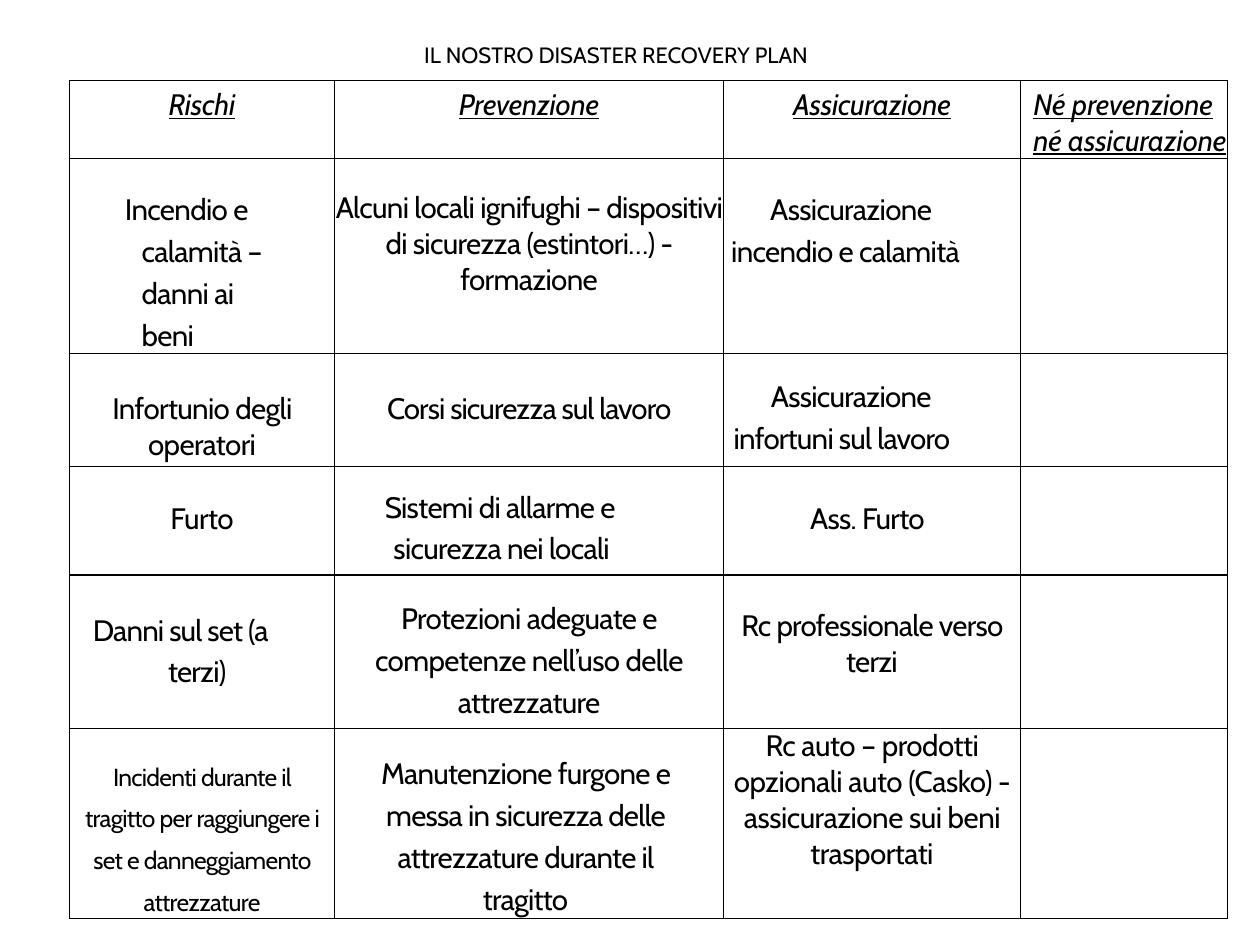
from lxml.etree import SubElement as Sub
from pptx import Presentation
from pptx.dml.color import RGBColor as Rgb
from pptx.enum.text import PP_ALIGN as Al
from pptx.oxml.ns import qn
from pptx.util import Cm, Pt


def put(frame, text, size=24, gap=-0.5, mid=True, left=0, first=0, line=None, head=False):
    para = frame.paragraphs[0]
    para.alignment = Al.CENTER if mid else Al.LEFT
    if line:
        para.line_spacing = Pt(line)
    props = para._p.get_or_add_pPr()
    props.set("marL", str(Cm(left)))
    props.set("indent", str(Cm(first)))
    run = para.add_run()
    run.text = text
    font = run.font
    font.name = "Cabin"
    font.size = Pt(size)
    font.color.rgb = Rgb.from_string("000000")
    font.italic = font.underline = head
    run._r.get_or_add_rPr().set("spc", str(round(gap * 100)))


def edge(cell, tint):
    props = cell._tc.get_or_add_tcPr()
    for side in ("a:lnL", "a:lnR", "a:lnT", "a:lnB"):
        line = Sub(props, qn(side), w=str(Pt(1)))
        fill = Sub(line, qn("a:solidFill"))
        Sub(fill, qn("a:srgbClr"), val=tint)


deck = Presentation()
deck.slide_width, deck.slide_height = Cm(36.12), Cm(27.1)
slide = deck.slides.add_slide(deck.slide_layouts[6])

title = slide.shapes.add_textbox(Cm(11.91), Cm(1.07), Cm(11.68), Cm(1.02)).text_frame
title.word_wrap = False
put(title, "IL NOSTRO DISASTER RECOVERY PLAN", size=18, gap=0, mid=False)

wides = [7.62, 11.13, 8.53, 5.94]
highs = [2.24, 5.59, 3.25, 3.1, 4.39, 5.46]
top = dict(head=True, gap=-0.2)
plans = [
    [
        ("Rischi", 0.18, 0, top),
        ("Prevenzione", 0.18, 0, top),
        ("Assicurazione", 0.18, 0, top),
        ("Né prevenzione né assicurazione", 0.18, 0,
         dict(head=True, gap=-0.1, mid=False, left=0.36)),
    ],
    [
        ("Incendio e calamità – danni ai beni", 0.79, 1.63,
         dict(mid=False, left=2.08, first=-0.48, line=34)),
        ("Alcuni locali ignifughi – dispositivi di sicurezza (estintori…) - formazione",
         0.91, 0, dict(gap=-0.55)),
        ("Assicurazione incendio e calamità", 0.79, 0,
         dict(mid=False, left=0.23, first=1.12, line=34)),
    ],
    [
        ("Infortunio degli operatori", 1.07, 0, {}),
        ("Corsi sicurezza sul lavoro", 1.07, 0, dict(gap=-0.75)),
        ("Assicurazione infortuni sul lavoro", 0.56, 0,
         dict(gap=-0.6, mid=False, left=0.3, first=1.07, line=34)),
    ],
    [
        ("Furto", 0.99, 0, dict(gap=-0.4)),
        ("Sistemi di allarme e sicurezza nei locali", 0.48, 1.5,
         dict(gap=-0.55, mid=False, left=1.68, first=-0.25, line=34)),
        ("Ass. Furto", 0.99, 0, dict(gap=-0.55, mid=False, left=2.49)),
    ],
    [
        ("Danni sul set (a terzi)", 0.91, 0.76,
         dict(gap=-0.65, mid=False, left=2.84, first=-2.16, line=34)),
        ("Protezioni adeguate e competenze nell’uso delle attrezzature", 0.58, 0.94,
         dict(left=0.94, line=34)),
        ("Rc professionale verso terzi", 0.94, 0, dict(gap=-0.6)),
    ],
    [
        ("Incidenti durante il tragitto per raggiungere i set e danneggiamento attrezzature",
         0.64, 0.25, dict(size=20, gap=-0.6, left=0.25, line=34)),
        ("Manutenzione furgone e messa in sicurezza delle attrezzature durante il tragitto",
         0.64, 1, dict(gap=-0.6, left=0.8, line=34)),
        ("Rc auto – prodotti opzionali auto (Casko) - assicurazione sui beni trasportati",
         0, 0, dict(gap=-0.4)),
    ],
]

table = slide.shapes.add_table(
    len(highs), len(wides), Cm(1.98), Cm(2.31), Cm(sum(wides)), Cm(sum(highs))
).table
table.first_row = table.horz_banding = False
for col, wide in zip(table.columns, wides):
    col.width = Cm(wide)
for row, high in zip(table.rows, highs):
    row.height = Cm(high)

for cell in table.iter_cells():
    cell.margin_left = cell.margin_right = cell.margin_top = cell.margin_bottom = 0
    edge(cell, "000000")
    cell.fill.background()

for r, plan in enumerate(plans):
    for c, (text, drop, right, form) in enumerate(plan):
        cell = table.cell(r, c)
        cell.margin_top = Cm(drop)
        cell.margin_right = Cm(right)
        put(cell.text_frame, text, **form)

deck.save("out.pptx")
